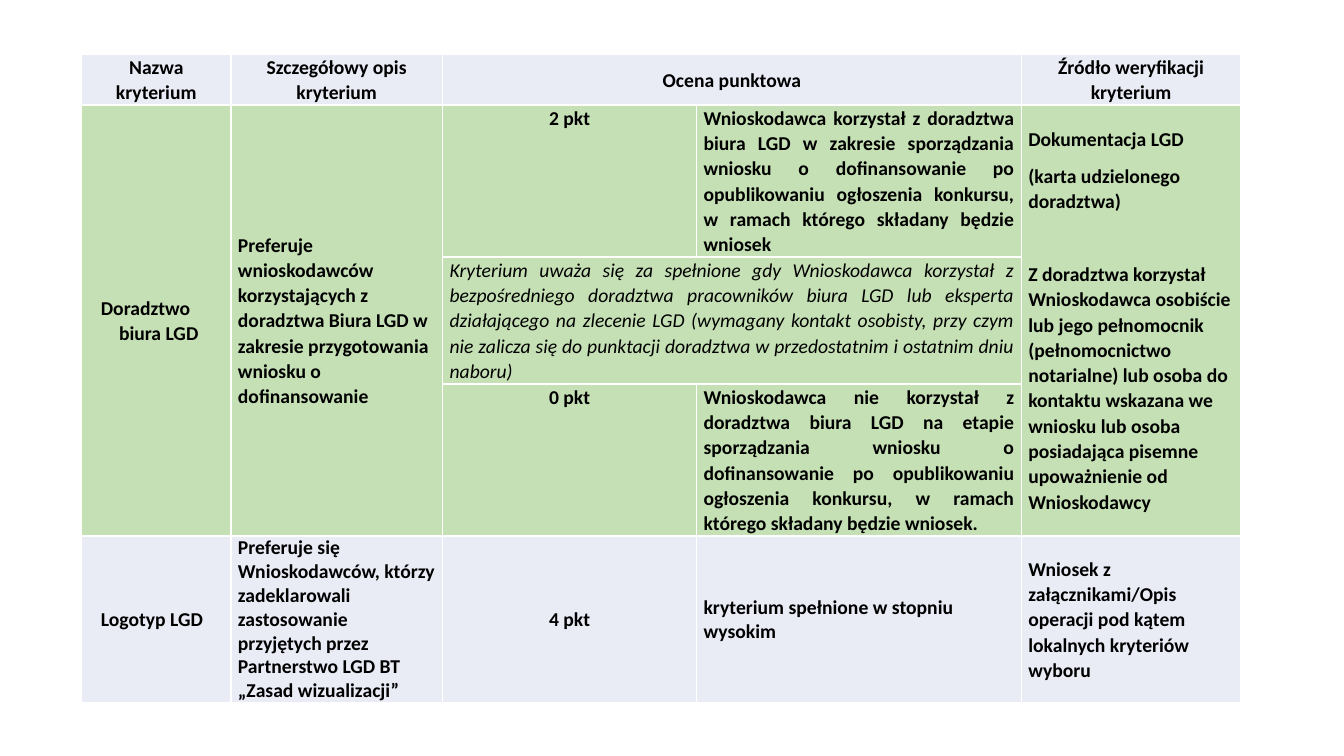
from dataclasses import dataclass, field

from lxml import etree
from pptx import Presentation
from pptx.dml.color import RGBColor
from pptx.enum.text import MSO_ANCHOR, PP_ALIGN
from pptx.oxml.ns import qn
from pptx.table import Table, _Cell
from pptx.text.text import TextFrame
from pptx.util import Emu, Inches, Pt

LEFT, CENTER, JUSTIFY = PP_ALIGN.LEFT, PP_ALIGN.CENTER, PP_ALIGN.JUSTIFY
TOP, MIDDLE = MSO_ANCHOR.TOP, MSO_ANCHOR.MIDDLE

SLIDE_WIDTH, SLIDE_HEIGHT = Inches(13.33), Inches(7.5)
TABLE_LEFT, TABLE_TOP = 6.08, 7.2
COLUMN_SHARES = (11.1, 15.75, 18.9, 24.16, 16.35)
ROW_SHARES = (6.7, 20.1, 16.8, 20.1, 18.9)


@dataclass(frozen=True)
class Theme:
    font: str = "Calibri"
    size: Pt = Pt(14)
    ink: RGBColor = RGBColor(0x00, 0x00, 0x00)
    pale: RGBColor = RGBColor(0xE9, 0xEB, 0xF5)
    green: RGBColor = RGBColor(0xC5, 0xE0, 0xB4)
    border: str = "FFFFFF"
    border_width: Pt = Pt(1)


THEME = Theme()
LOOSE = {"line_spacing": 1.06, "space_after": Pt(8)}
TIGHT = {"line_spacing": 1.0, "space_after": Pt(0)}
BOLD = {"bold": True, "italic": False}
ITALIC = {"bold": False, "italic": True}
CELL_MARGINS = {
    "margin_left": Inches(0.07),
    "margin_right": Inches(0.07),
    "margin_top": 0,
    "margin_bottom": 0,
}


@dataclass(frozen=True)
class Hanging:
    margin: float
    first_line: float


@dataclass(frozen=True)
class Criterion:
    row: int
    column: int
    paragraphs: tuple[str, ...]
    fill: RGBColor = THEME.green
    rows: int = 1
    columns: int = 1
    align: PP_ALIGN = LEFT
    anchor: MSO_ANCHOR = MIDDLE
    spacing: dict = field(default_factory=lambda: LOOSE)
    emphasis: dict = field(default_factory=lambda: BOLD)
    hanging: Hanging | None = None
    gap_before_last: Pt = Pt(0)


NAME_HANGING = Hanging(0.3, -0.18)
POINTS_HANGING = Hanging(0.61, -0.61)

HEADINGS = tuple(
    Criterion(0, column, (heading,), THEME.pale, columns=columns, align=CENTER)
    for column, columns, heading in (
        (0, 1, "Nazwa kryterium"),
        (1, 1, "Szczegółowy opis kryterium"),
        (2, 2, "Ocena punktowa"),
        (4, 1, "Źródło weryfikacji kryterium"),
    )
)

ADVISORY = (
    Criterion(1, 0, ("Doradztwo biura LGD",), rows=3, hanging=NAME_HANGING),
    Criterion(1, 1, (
        "Preferuje wnioskodawców korzystających z doradztwa Biura LGD w zakresie "
        "przygotowania wniosku o dofinansowanie",
    ), rows=3),
    Criterion(1, 2, ("2 pkt",), align=CENTER, anchor=TOP, hanging=POINTS_HANGING),
    Criterion(1, 3, (
        "Wnioskodawca korzystał z doradztwa biura LGD w zakresie sporządzania wniosku "
        "o dofinansowanie po opublikowaniu ogłoszenia konkursu, w ramach którego "
        "składany będzie wniosek",
    ), align=JUSTIFY),
    Criterion(1, 4, (
        "Dokumentacja LGD",
        "(karta udzielonego doradztwa)",
        "Z doradztwa korzystał Wnioskodawca osobiście lub jego pełnomocnik "
        "(pełnomocnictwo notarialne) lub osoba do kontaktu wskazana we wniosku lub "
        "osoba posiadająca pisemne upoważnienie od Wnioskodawcy",
    ), rows=3, gap_before_last=Pt(26)),
    Criterion(2, 2, (
        "Kryterium uważa się za spełnione gdy Wnioskodawca korzystał "
        "z bezpośredniego doradztwa pracowników biura LGD lub eksperta działającego "
        "na zlecenie LGD (wymagany kontakt osobisty, przy czym nie zalicza się do "
        "punktacji doradztwa w przedostatnim i ostatnim dniu naboru)",
    ), columns=2, align=JUSTIFY, emphasis=ITALIC),
    Criterion(3, 2, ("0 pkt",), align=CENTER, anchor=TOP),
    Criterion(3, 3, (
        "Wnioskodawca nie korzystał z doradztwa biura LGD na etapie sporządzania "
        "wniosku o dofinansowanie po opublikowaniu ogłoszenia konkursu, w ramach "
        "którego składany będzie wniosek.",
    ), align=JUSTIFY),
)

LOGOTYPE = (
    Criterion(4, 0, ("Logotyp LGD",), THEME.pale, hanging=NAME_HANGING),
    Criterion(4, 1, (
        "Preferuje się Wnioskodawców, którzy zadeklarowali zastosowanie przyjętych "
        "przez Partnerstwo LGD BT „Zasad wizualizacji”",
    ), THEME.pale, spacing=TIGHT),
    Criterion(4, 2, ("4 pkt",), THEME.pale, align=CENTER, spacing=TIGHT),
    Criterion(4, 3, ("kryterium spełnione w stopniu wysokim",), THEME.pale, spacing=TIGHT),
    Criterion(4, 4, (
        "Wniosek z załącznikami/Opis operacji pod kątem lokalnych kryteriów wyboru",
    ), THEME.pale),
)


def across(share: float) -> Emu:
    return Emu(round(SLIDE_WIDTH * share / 100))


def down(share: float) -> Emu:
    return Emu(round(SLIDE_HEIGHT * share / 100))


def apply(target: object, values: dict) -> None:
    for name, value in values.items():
        setattr(target, name, value)


def draw_borders(cell: _Cell) -> None:
    properties = cell._tc.get_or_add_tcPr()
    for position, side in enumerate(("lnL", "lnR", "lnT", "lnB")):
        edge = etree.Element(qn(f"a:{side}"), w=str(int(THEME.border_width)))
        paint = etree.SubElement(edge, qn("a:solidFill"))
        etree.SubElement(paint, qn("a:srgbClr"), val=THEME.border)
        properties.insert(position, edge)


def write_paragraphs(frame: TextFrame, criterion: Criterion) -> None:
    for index, wording in enumerate(criterion.paragraphs):
        paragraph = frame.add_paragraph() if index else frame.paragraphs[0]
        apply(paragraph, criterion.spacing | {"alignment": criterion.align})
        if criterion.hanging:
            indents = paragraph._p.get_or_add_pPr()
            indents.set("marL", str(Inches(criterion.hanging.margin)))
            indents.set("indent", str(Inches(criterion.hanging.first_line)))
        phrase = paragraph.add_run()
        phrase.text = wording
        apply(phrase.font, criterion.emphasis | {"name": THEME.font, "size": THEME.size})
        phrase.font.color.rgb = THEME.ink
    if criterion.gap_before_last:
        frame.paragraphs[-1].space_before = criterion.gap_before_last


def draw_criterion(grid: Table, criterion: Criterion) -> None:
    cell = grid.cell(criterion.row, criterion.column)
    last_row = criterion.row + criterion.rows - 1
    last_column = criterion.column + criterion.columns - 1
    if (last_row, last_column) != (criterion.row, criterion.column):
        cell.merge(grid.cell(last_row, last_column))
    for row in range(criterion.row, last_row + 1):
        for column in range(criterion.column, last_column + 1):
            part = grid.cell(row, column)
            part.fill.solid()
            part.fill.fore_color.rgb = criterion.fill
            draw_borders(part)
    apply(cell, CELL_MARGINS | {"vertical_anchor": criterion.anchor})
    write_paragraphs(cell.text_frame, criterion)


def main() -> None:
    deck = Presentation()
    apply(deck, {"slide_width": SLIDE_WIDTH, "slide_height": SLIDE_HEIGHT})
    slide = deck.slides.add_slide(deck.slide_layouts[6])
    grid = slide.shapes.add_table(
        len(ROW_SHARES), len(COLUMN_SHARES), across(TABLE_LEFT), down(TABLE_TOP),
        across(sum(COLUMN_SHARES)), down(sum(ROW_SHARES)),
    ).table
    apply(grid, {"first_row": False, "horz_banding": False})
    for column, share in zip(grid.columns, COLUMN_SHARES):
        column.width = across(share)
    for row, share in zip(grid.rows, ROW_SHARES):
        row.height = down(share)
    for criterion in HEADINGS + ADVISORY + LOGOTYPE:
        draw_criterion(grid, criterion)
    deck.save("out.pptx")


if __name__ == "__main__":
    main()
